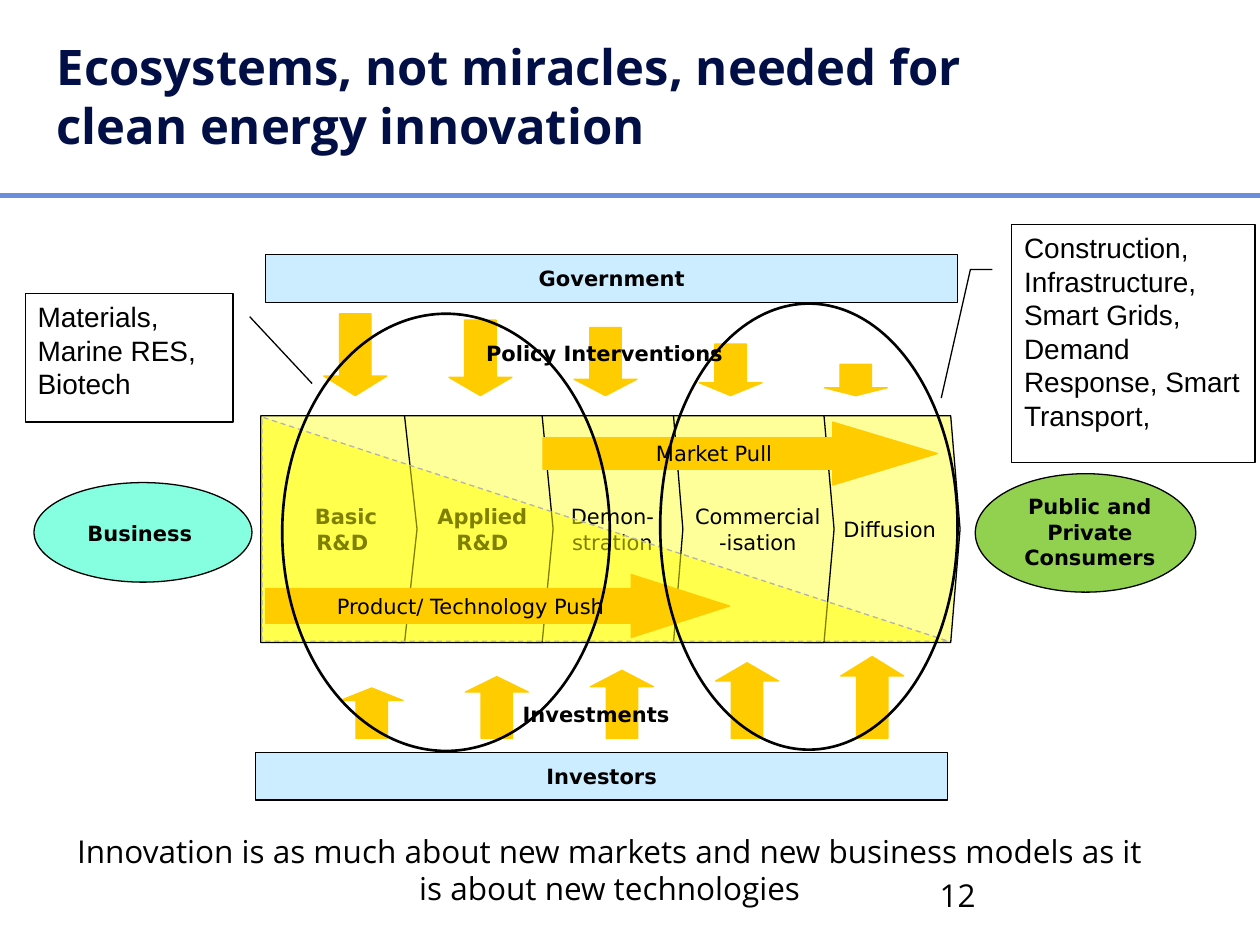
"""Build a slide on the clean energy innovation ecosystem."""
from lxml import etree
from pptx import Presentation
from pptx.dml.color import RGBColor
from pptx.enum.dml import MSO_LINE
from pptx.enum.shapes import MSO_CONNECTOR, MSO_SHAPE
from pptx.enum.text import MSO_ANCHOR, MSO_AUTO_SIZE, PP_ALIGN
from pptx.oxml.ns import qn
from pptx.util import Inches, Pt

LEFT, CENTER = PP_ALIGN.LEFT, PP_ALIGN.CENTER
TOP, MIDDLE = MSO_ANCHOR.TOP, MSO_ANCHOR.MIDDLE
RECTANGLE, OVAL, STAGE = MSO_SHAPE.RECTANGLE, MSO_SHAPE.OVAL, MSO_SHAPE.PENTAGON
DOWN, RIGHT = MSO_SHAPE.DOWN_ARROW, MSO_SHAPE.RIGHT_ARROW
BLACK, GOLD, SKY = "000000", "FFCC00", "CCECFF"
LABEL_FONT, BODY_FONT = "DejaVu Sans", "Open Sans"
CELL = Inches(0.1)

presentation = Presentation()
presentation.slide_width, presentation.slide_height = 100 * CELL, 75 * CELL
slide = presentation.slides.add_slide(presentation.slide_layouts[5])


def write(shape, text, size=12, font=LABEL_FONT, bold=False, color=BLACK,
          align=CENTER, anchor=MIDDLE, wrap=True):
    """Put formatted text into a shape."""
    frame = shape.text_frame
    frame.text = text
    frame.word_wrap = wrap
    frame.auto_size = MSO_AUTO_SIZE.NONE
    frame.vertical_anchor = anchor
    paragraph = frame.paragraphs[0]
    paragraph.alignment = align
    for run in paragraph.runs:
        run.font.size, run.font.name, run.font.bold = Pt(size), font, bold
        run.font.color.rgb = RGBColor.from_string(color)


def draw(kind, place, fill=None, line=BLACK, weight=0.75, adjust=()):
    """Add a preset shape, or a text box when kind is None, in grid cells."""
    box = [round(cells * CELL) for cells in place]
    if kind is None:
        return slide.shapes.add_textbox(*box)
    shape = slide.shapes.add_shape(kind, *box)
    shape.shadow.inherit = False
    if fill:
        shape.fill.solid()
        shape.fill.fore_color.rgb = RGBColor.from_string(fill)
    else:
        shape.fill.background()
    shape.line.color.rgb = RGBColor.from_string(line)
    shape.line.width = Pt(weight)
    for index, value in enumerate(adjust):
        shape.adjustments[index] = value
    return shape


rule = slide.shapes.add_connector(MSO_CONNECTOR.STRAIGHT, 0, round(15.5 * CELL),
                                  100 * CELL, round(15.5 * CELL))
rule.line.color.rgb = RGBColor.from_string("6A8DDC")
rule.line.width = Pt(3)
etree.SubElement(rule._element.spPr, qn("a:effectLst"))

title = slide.shapes.title
title.left, title.top, title.width, title.height = (
    round(cells * CELL) for cells in (3.5, 2.1, 84.2, 11))
write(title, "Ecosystems, not miracles, needed for clean energy innovation",
      28, BODY_FONT, True, "010F46", LEFT)
title.text_frame.paragraphs[0].line_spacing = 1.0
write(draw(None, (73.6, 69, 20.8, 3.4)), "12", 18, BODY_FONT, align=LEFT, anchor=TOP)

for text, left, top in (("Government", 21.1, 20.2), ("Investors", 20.3, 59.7)):
    write(draw(RECTANGLE, (left, top, 54.9, 3.8), SKY), text, bold=True, wrap=False)

draw(OVAL, (2.7, 38.3, 17.3, 7.9), "85FFE0")
write(draw(None, (5.9, 40.8, 10.4, 3)), "Business", bold=True, anchor=TOP, wrap=False)
draw(OVAL, (77.4, 37.6, 17.5, 9.4), "92D050")
write(draw(None, (78.2, 38.7, 16.6, 7.1)), "Public and Private Consumers",
      bold=True, anchor=TOP)

policy_arrows = ((6.5, 0.31), (6, 0.29), (5.4, 0.26), (4.1, 0.25), (2.5, 0.25))
investment_arrows = ((4, 0.25), (4.9, 0.25), (5.4, 0.26), (6, 0.29), (6.5, 0.31))
for left, bottom, rotation, arrows in ((25.7, 31.4, 0, policy_arrows),
                                       (27, 58.6, 180, investment_arrows)):
    for column, (height, head) in enumerate(arrows):
        arrow = draw(DOWN, (left + 9.93 * column, bottom - height, 5, height),
                     GOLD, GOLD, adjust=(0.5, head))
        arrow.rotation = rotation

for text, place in (("Policy Interventions", (37.6, 26.5, 22.7, 3.4)),
                    ("Investments", (40.5, 55.2, 15, 3.4))):
    write(draw(None, place), text, bold=True, align=LEFT, anchor=TOP)

for text, left, width, point, inset_left, inset_right, bold in (
        ("Diffusion", 63.8, 12.4, 0.06, 2.6, 1, False),
        ("Commercial\v-isation", 52.9, 13.3, 0.06, 1.8, 0.2, False),
        ("Demon-stration", 41.8, 12.4, 0.06, 3, 1.4, False),
        ("Applied R&D", 31.5, 12.4, 0.07, 2.6, 1, True),
        ("Basic R&D ", 20.7, 12.4, 0.08, 2.6, 1, True)):
    stage = draw(STAGE, (left, 33, width, 18), "FFFF99", adjust=(point,))
    write(stage, text, bold=bold)
    stage.text_frame.margin_left = round(inset_left * CELL)
    stage.text_frame.margin_right = round(inset_right * CELL)

wedge = draw(MSO_SHAPE.RIGHT_TRIANGLE, (20.8, 33.1, 54.5, 17.8), "FFFF00", "B2B2B2")
wedge.line.dash_style = MSO_LINE.DASH
wedge_color = wedge._element.spPr.find(qn("a:solidFill")).find(qn("a:srgbClr"))
etree.SubElement(wedge_color, qn("a:alpha"), val="50000")

for text, place, adjust in (
        ("Product/ Technology Push", (21.1, 45.6, 36.8, 5), (0.55, 1.56)),
        ("Market Pull", (43.1, 33.5, 31.3, 5), (0.5, 1.66))):
    write(draw(RIGHT, place, GOLD, GOLD, adjust=adjust), text, wrap=False)

for place in ((52.4, 24.1, 23.6, 35.4), (22.4, 24.9, 26, 34.7)):
    draw(OVAL, place, weight=1.5)

for kind, text, place, adjust in (
        (MSO_SHAPE.LINE_CALLOUT_1, "Materials, Marine RES, Biotech",
         (2, 23.3, 16.5, 10.2), (0.7, 1.38, 0.18, 1.08)),
        (MSO_SHAPE.LINE_CALLOUT_2,
         "Construction, Infrastructure, Smart Grids, Demand Response, Smart Transport,",
         (80.3, 17.8, 19.3, 18.9), (0.19, -0.08, 0.19, -0.17, 0.73, -0.29))):
    write(draw(kind, place, adjust=adjust), text, 16, "Arial", align=LEFT, anchor=TOP)

write(draw(None, (5.1, 65.5, 86.6, 7.1)),
      "Innovation is as much about new markets and new business models as it is "
      "about new technologies", 18, BODY_FONT, anchor=TOP)

presentation.save("out.pptx")
